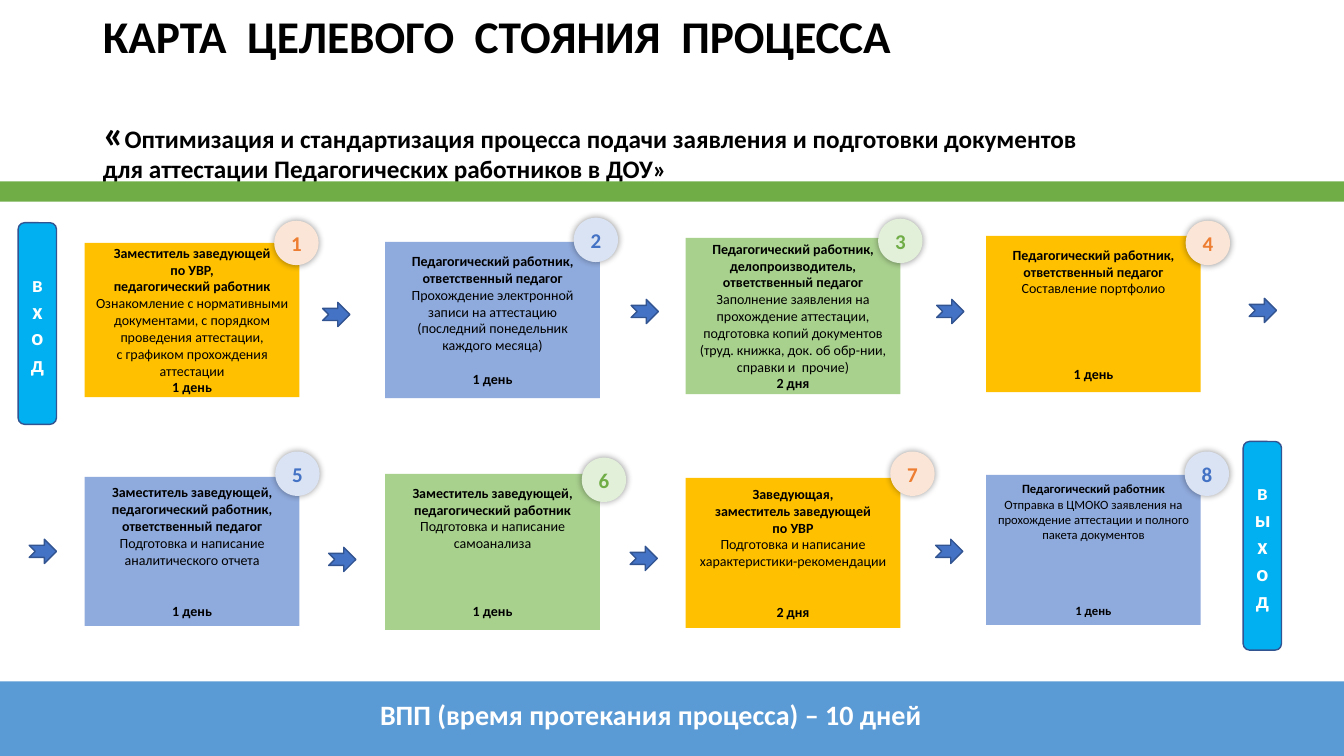
from dataclasses import dataclass

from lxml import etree
from pptx import Presentation
from pptx.dml.color import RGBColor
from pptx.enum.shapes import MSO_SHAPE as Preset
from pptx.enum.text import MSO_ANCHOR as Anchor, MSO_AUTO_SIZE as AutoSize, PP_ALIGN as Align
from pptx.oxml.ns import qn
from pptx.util import Inches, Pt

FONT = "Calibri"
WHITE = RGBColor(0xFF, 0xFF, 0xFF)
BLACK = RGBColor(0, 0, 0)
BAND_GREEN = RGBColor(0x70, 0xAD, 0x47)
BAND_BLUE = RGBColor(0x5B, 0x9B, 0xD5)
GATE_BLUE = RGBColor(0x00, 0xB0, 0xF0)
ARROW_BLUE = RGBColor(0x44, 0x72, 0xC4)
OUTLINE = RGBColor(0x32, 0x54, 0x91)

# Schemes: card fill, badge fill, badge number
YELLOW = (RGBColor(0xFF, 0xC0, 0x00), RGBColor(0xFB, 0xE5, 0xD6), RGBColor(0xED, 0x7D, 0x31))
BLUE = (RGBColor(0x8F, 0xAA, 0xDC), RGBColor(0xDA, 0xE3, 0xF3), ARROW_BLUE)
GREEN = (RGBColor(0xA9, 0xD1, 0x8E), RGBColor(0xE2, 0xF0, 0xD9), BAND_GREEN)

# Grid of step cards, in inches
SLIDE_WIDTH, SLIDE_HEIGHT = 13.33, 7.5
COLUMNS = 4
CARD_LEFT, CARD_PITCH, CARD_WIDTH = 0.84, 2.98, 2.13
BADGE_SIZE = 0.44
ARROW_WIDTH, ARROW_HEIGHT = 0.27, 0.24
GATE_WIDTH = 0.38
LINE_RATIO = 1.22  # line height of the font relative to its size


@dataclass
class Step:
    scheme: tuple
    top: float
    height: float
    badge_center: tuple
    people: list
    actions: list
    duration: str
    gap_lines: int = 0
    size: int = 10


STEPS = [
    Step(YELLOW, 2.41, 1.53, (2.94, 2.41),
         ["Заместитель заведующей", "по УВР,", "педагогический работник"],
         ["Ознакомление с нормативными документами, с порядком проведения аттестации,",
          "с графиком прохождения аттестации"], "1 день"),
    Step(BLUE, 2.4, 1.55, (5.91, 2.38),
         ["Педагогический работник, ответственный педагог"],
         ["Прохождение электронной записи на аттестацию",
          "(последний понедельник каждого месяца)"], "1 день", 1),
    Step(GREEN, 2.36, 1.55, (8.93, 2.39),
         ["Педагогический работник, делопроизводитель, ответственный педагог"],
         ["Заполнение заявления на прохождение аттестации, подготовка копий документов "
          "(труд. книжка, док. об обр-нии, справки и  прочие)"], "2 дня"),
    Step(YELLOW, 2.34, 1.55, (11.98, 2.41),
         ["Педагогический работник, ответственный педагог"],
         ["Составление портфолио"], "1 день", 4),
    Step(BLUE, 4.73, 1.48, (2.95, 4.7),
         ["Заместитель заведующей, педагогический работник, ответственный педагог"],
         ["Подготовка и написание аналитического отчета"], "1 день", 2),
    Step(GREEN, 4.7, 1.55, (5.99, 4.76),
         ["Заместитель заведующей, педагогический работник"],
         ["Подготовка и написание самоанализа"], "1 день", 3),
    Step(YELLOW, 4.74, 1.49, (9.05, 4.7),
         ["Заведующая,", "заместитель заведующей", "по УВР"],
         ["Подготовка и написание характеристики-рекомендации"], "2 дня", 2),
    Step(BLUE, 4.71, 1.49, (11.97, 4.7),
         ["Педагогический работник"],
         ["Отправка в ЦМОКО заявления на прохождение аттестации и полного пакета документов"],
         "1 день", 4, 9),
]
ARROWS = [(3.2, 3), (6.26, 2.97), (9.29, 2.97), (12.39, 2.96),
          (0.29, 5.35), (3.26, 5.43), (6.25, 5.42), (9.28, 5.35)]


def style_runs(paragraph, size, color, bold=True):
    for run in paragraph.runs:
        run.font.name = FONT
        run.font.size = Pt(size)
        run.font.bold = bold
        run.font.color.rgb = color


def add_block(slide, preset, left, top, width, height, fill, outlined=False):
    shape = slide.shapes.add_shape(preset, Inches(left), Inches(top), Inches(width), Inches(height))
    shape.shadow.inherit = False
    shape.fill.solid()
    shape.fill.fore_color.rgb = fill
    if outlined:
        shape.line.color.rgb = OUTLINE
        shape.line.width = Pt(1)
    else:
        shape.line.fill.background()
    return shape


def write_lines(shape, lines, size, color):
    """Fill the shape with centred (text, bold) lines."""
    frame = shape.text_frame
    frame.word_wrap = True
    frame.vertical_anchor = Anchor.MIDDLE
    frame.text = "\n".join(text for text, bold in lines)
    for paragraph, (text, bold) in zip(frame.paragraphs, lines):
        paragraph.alignment = Align.CENTER
        style_runs(paragraph, size, color, bold)
    return frame


def add_glow_shadow(shape):
    effects = shape._element.spPr.find(qn("a:effectLst"))
    shadow = etree.SubElement(effects, qn("a:outerShdw"), blurRad=str(Pt(5)), dist="0", dir="0")
    color = etree.SubElement(shadow, qn("a:srgbClr"), val="000000")
    etree.SubElement(color, qn("a:alpha"), val="40000")


def add_card(slide, index, step):
    left = CARD_LEFT + index % COLUMNS * CARD_PITCH
    card = add_block(slide, Preset.RECTANGLE, left, step.top, CARD_WIDTH, step.height, step.scheme[0])
    lines = [(text, True) for text in step.people]
    lines += [(text, False) for text in step.actions]
    frame = write_lines(card, lines + [(step.duration, True)], step.size, BLACK)
    frame.paragraphs[-1].space_before = Pt(step.gap_lines * step.size * LINE_RATIO)


def add_badge(slide, number, step):
    center_x, center_y = step.badge_center
    badge = add_block(slide, Preset.OVAL, center_x - BADGE_SIZE / 2, center_y - BADGE_SIZE / 2,
                      BADGE_SIZE, BADGE_SIZE, step.scheme[1])
    add_glow_shadow(badge)
    frame = write_lines(badge, [(str(number), True)], 15, step.scheme[2])
    frame.margin_left = frame.margin_right = frame.margin_top = frame.margin_bottom = 0


def add_gate(slide, word, left, top, height):
    """The narrow width stacks the letters of the word."""
    gate = add_block(slide, Preset.ROUNDED_RECTANGLE, left, top, GATE_WIDTH, height, GATE_BLUE, True)
    write_lines(gate, [(word, True)], 16, WHITE)


def format_title(title):
    title.left, title.top, title.width, title.height = map(Inches, (0.92, 0.4, 11.5, 1.45))
    frame = title.text_frame
    frame.word_wrap = True
    frame.auto_size = AutoSize.NONE
    frame.vertical_anchor = Anchor.MIDDLE
    frame.margin_bottom = Inches(0.33)
    frame.text = ("КАРТА  ЦЕЛЕВОГО  СТОЯНИЯ  ПРОЦЕССА\n«\n"
                  "для аттестации Педагогических работников в ДОУ»")
    heading, subject, ending = frame.paragraphs
    subject.add_run().text = "Оптимизация и стандартизация процесса подачи заявления и подготовки документов"
    for paragraph, size in ((heading, 32.4), (subject, 18), (ending, 18)):
        paragraph.alignment = Align.LEFT
        paragraph.line_spacing = 0.9
        paragraph.space_before = Pt(0)
        style_runs(paragraph, size, BLACK)
    subject.space_before = Pt(35.6)
    subject.runs[0].font.size = Pt(28.8)


def add_total(slide):
    box = slide.shapes.add_textbox(Inches(2.86), Inches(6.87), Inches(7.19), Inches(0.44))
    write_lines(box, [("ВПП (время протекания процесса) – 10 дней", True)], 20, WHITE)


def main():
    presentation = Presentation()
    presentation.slide_width = Inches(SLIDE_WIDTH)
    presentation.slide_height = Inches(SLIDE_HEIGHT)
    slide = presentation.slides.add_slide(presentation.slide_layouts[5])

    # Title and bands
    format_title(slide.shapes.title)
    add_block(slide, Preset.RECTANGLE, 0, 1.8, SLIDE_WIDTH, 0.2, BAND_GREEN)
    add_block(slide, Preset.RECTANGLE, 0, 6.76, SLIDE_WIDTH, SLIDE_HEIGHT - 6.76, BAND_BLUE)
    add_total(slide)

    # Steps of the process
    for index, step in enumerate(STEPS):
        add_card(slide, index, step)
        add_badge(slide, index + 1, step)

    # Flow from entry to exit
    for left, top in ARROWS:
        add_block(slide, Preset.NOTCHED_RIGHT_ARROW, left, top, ARROW_WIDTH, ARROW_HEIGHT, ARROW_BLUE, True)
    add_gate(slide, "вход", 0.18, 2.21, 2)
    add_gate(slide, "выход", 12.33, 4.38, 2.07)

    presentation.save("out.pptx")


if __name__ == "__main__":
    main()
